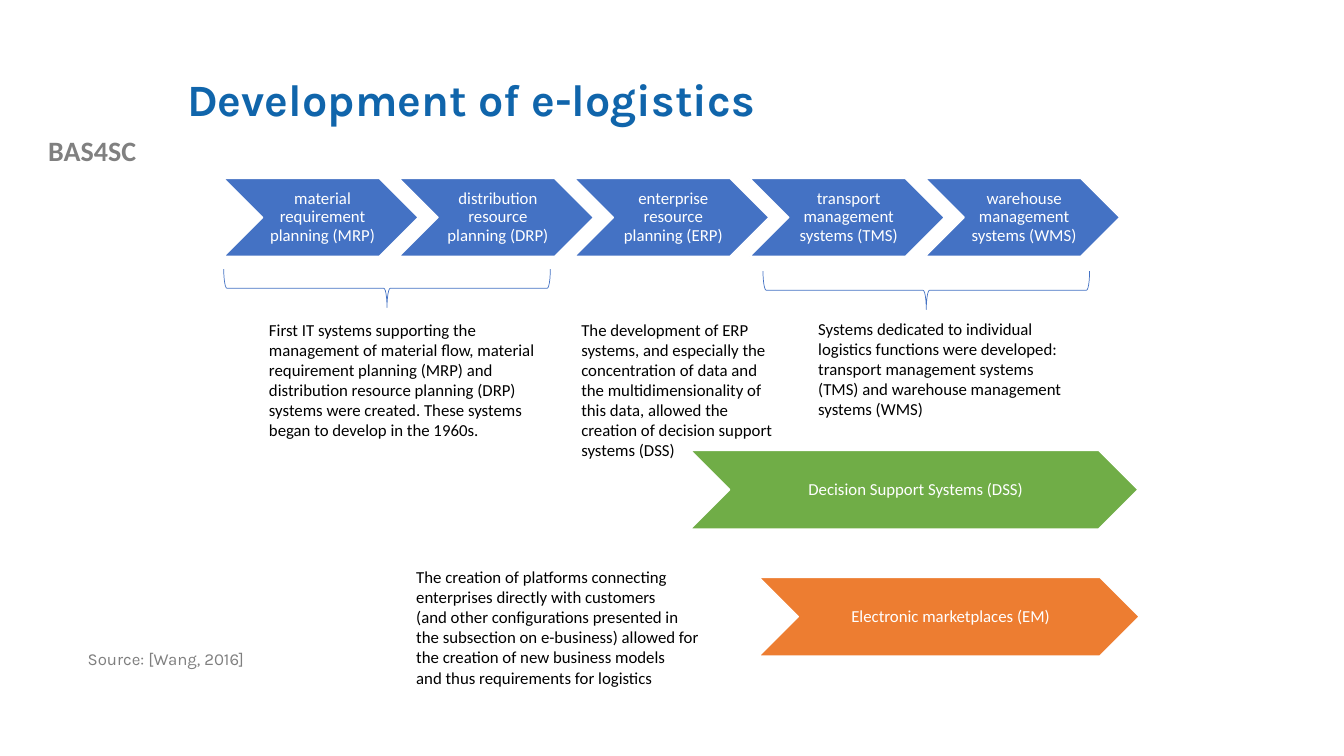
import pptx
import pptx.util
import pptx.dml.color
import pptx.enum.shapes
import pptx.enum.text

Cm = pptx.util.Cm
SHAPE = pptx.enum.shapes.MSO_SHAPE
ALIGN = pptx.enum.text.PP_ALIGN
ANCHOR = pptx.enum.text.MSO_ANCHOR


def color(hex_string):
    return pptx.dml.color.RGBColor.from_string(hex_string)


def write(box, text, size=12, font="Calibri", ink="000000", bold=False,
          align=ALIGN.LEFT, anchor=ANCHOR.TOP, spacing=1.0):
    frame = box.text_frame
    frame.word_wrap = True
    frame.vertical_anchor = anchor
    para = frame.paragraphs[0]
    para.text = text
    para.alignment = align
    para.line_spacing = spacing
    for span in para.runs:
        span.font.size = pptx.util.Pt(size)
        span.font.name = font
        span.font.bold = bold
        span.font.color.rgb = color(ink)


deck = pptx.Presentation()
deck.slide_width, deck.slide_height = Cm(33.87), Cm(19.05)
page = deck.slides.add_slide(deck.slide_layouts[6])
shapes = page.shapes

# Project label, title and source
label = shapes.add_textbox(Cm(0), Cm(3.25), Cm(4.65), Cm(1.12))
write(label, "BAS4SC", size=20, ink="808080", bold=True, align=ALIGN.CENTER)

title = shapes.add_textbox(Cm(4.47), Cm(1.02), Cm(27.08), Cm(3.1))
write(title, "Development of e-logistics", size=32, font="Karla", ink="1065AB",
      bold=True, anchor=ANCHOR.MIDDLE, spacing=0.9)

source = shapes.add_textbox(Cm(1.96), Cm(16.28), Cm(12.73), Cm(1.32))
write(source, "Source: [Wang, 2016]", font="Karla", ink="7F7F7F", spacing=0.9)

# Chevrons: a row of five systems, then two wide ones
systems = [
    "material requirement planning (MRP)",
    "distribution resource planning (DRP)",
    "enterprise resource planning (ERP)",
    "transport management systems (TMS)",
    "warehouse management systems (WMS)",
]
chevrons = [(5.64 + 4.42 * i, 4.5, 4.9, 1.96, "4472C4", name)
            for i, name in enumerate(systems)]
chevrons += [
    (19.13, 14.55, 9.58, 1.98, "ED7D31", "Electronic marketplaces (EM)"),
    (17.4, 11.35, 11.28, 1.98, "70AD47", "Decision Support Systems (DSS)"),
]

# Explanations, set before the wide chevrons are drawn over them
notes = [
    (6.53, 7.92, 7.49, 3.33,
     "First IT systems supporting the management of material flow, material "
     "requirement planning (MRP) and distribution resource planning (DRP) "
     "systems were created. These systems began to develop in the 1960s."),
    (14.4, 7.92, 5.51, 3.84,
     "The development of ERP systems, and especially the concentration of data "
     "and the multidimensionality of this data, allowed the creation of "
     "decision support systems (DSS)"),
    (20.37, 7.9, 6.96, 2.82,
     "Systems dedicated to individual logistics functions were developed: "
     "transport management systems (TMS) and warehouse management systems (WMS)"),
    (10.24, 14.15, 7.75, 3.33,
     "The creation of platforms connecting enterprises directly with customers\v"
     "(and other configurations presented in the subsection on e-business) "
     "allowed for the creation of new business models\v"
     "and thus requirements for logistics"),
]
for left, top, width, height, text in notes:
    note = shapes.add_textbox(Cm(left), Cm(top), Cm(width), Cm(height))
    write(note, text)

for left, top, width, height, fill, text in chevrons:
    chevron = shapes.add_shape(SHAPE.CHEVRON, Cm(left), Cm(top), Cm(width), Cm(height))
    chevron.shadow.inherit = False
    chevron.fill.solid()
    chevron.fill.fore_color.rgb = color(fill)
    chevron.line.color.rgb = color("FFFFFF")
    chevron.line.width = pptx.util.Pt(1)
    frame = chevron.text_frame
    frame.margin_left = Cm(0.13)
    frame.margin_top = frame.margin_right = frame.margin_bottom = Cm(0.05)
    write(chevron, text, ink="FFFFFF", align=ALIGN.CENTER,
          anchor=ANCHOR.MIDDLE, spacing=0.9)

# Braces under the first two and the last two systems
for left, top in [(9.27, 3.15), (22.86, 3.2)]:
    brace = shapes.add_shape(SHAPE.LEFT_BRACE, Cm(left), Cm(top), Cm(0.97), Cm(8.23))
    brace.rotation = 270
    brace.shadow.inherit = False
    brace.fill.background()
    brace.line.color.rgb = color("4472C4")
    brace.line.width = pptx.util.Pt(0.5)

deck.save("out.pptx")
